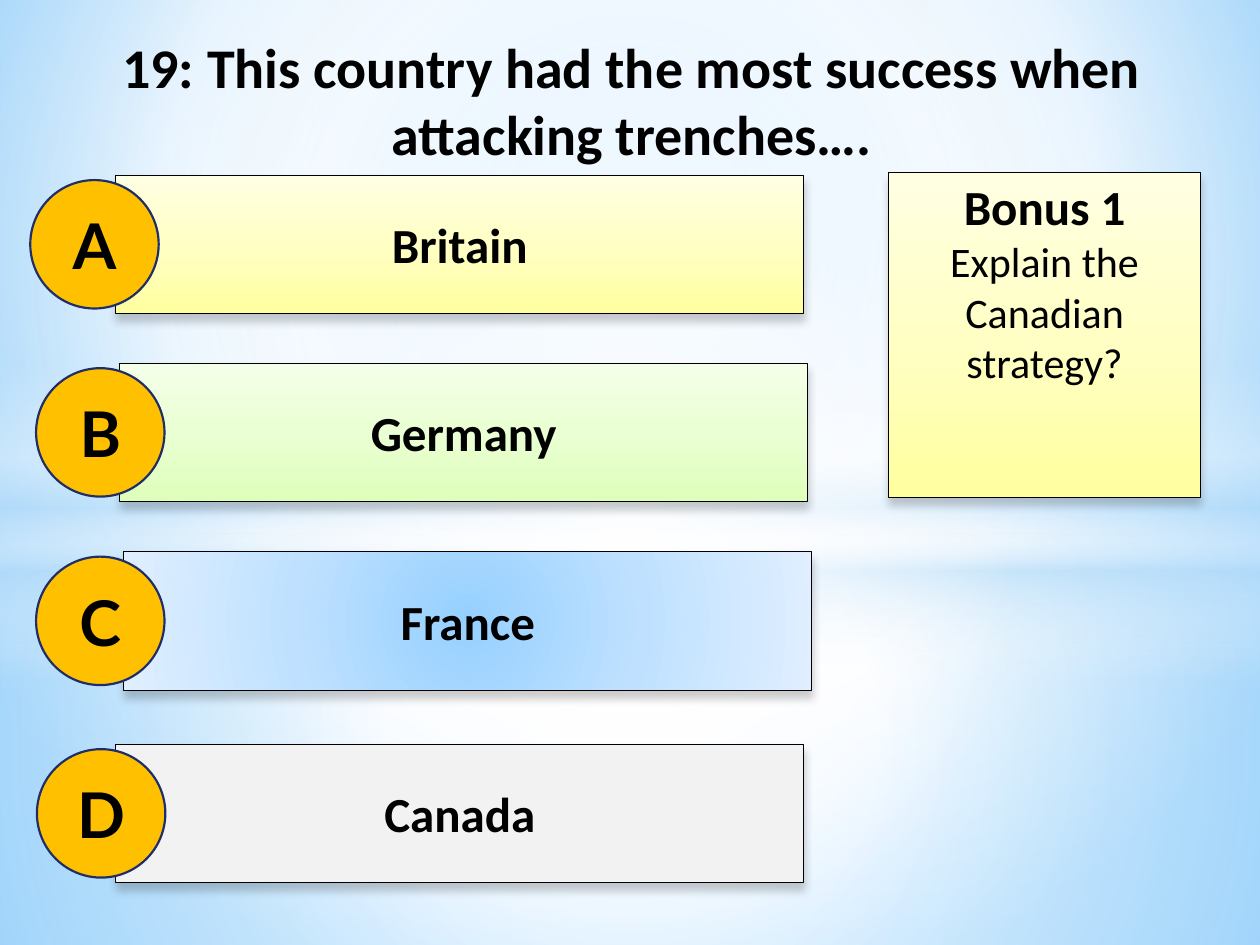
from typing import NamedTuple

from lxml import etree
from pptx import Presentation
from pptx.dml.color import RGBColor
from pptx.enum import shapes, text
from pptx.oxml import ns
from pptx.util import Pt

BLACK = RGBColor(0x00, 0x00, 0x00)
WHITE = RGBColor(0xFF, 0xFF, 0xFF)
SKY = RGBColor(0xB4, 0xDC, 0xFA)
GREY = RGBColor(0xF2, 0xF2, 0xF2)
AMBER = RGBColor(0xFF, 0xC0, 0x00)
NAVY = RGBColor(0x1F, 0x2E, 0x69)
BACKDROP_EDGE = RGBColor(0x9E, 0xD5, 0xFF)
BACKDROP_DEEP = RGBColor(0x5B, 0xB9, 0xFF)
YELLOWS = [RGBColor(0xFF, 0xFF, 0xA0), RGBColor(0xFF, 0xFF, 0xC5), RGBColor(0xFF, 0xFF, 0xE3)]
GREENS = [RGBColor(0xDE, 0xFF, 0xBB), RGBColor(0xEA, 0xFF, 0xD3), RGBColor(0xF4, 0xFF, 0xE9)]
BLUES = [RGBColor(0x96, 0xD0, 0xFF), RGBColor(0xBF, 0xE1, 0xFF), RGBColor(0xE0, 0xEF, 0xFF)]

RECT = shapes.MSO_SHAPE.RECTANGLE
OVAL = shapes.MSO_SHAPE.OVAL
BAR_WIDTH, BAR_HEIGHT, BADGE_SIZE = 393.1, 79.2, 73.4


class Stop(NamedTuple):
    position: int
    color: RGBColor
    opacity: int = 100


class Gradient(NamedTuple):
    """Linear when an angle is given, otherwise circular around the centre insets."""
    stops: list[Stop]
    angle: int | None = None
    centre: tuple[int, int, int, int] = (50, 50, 50, 50)


class Box(NamedTuple):
    left: float
    top: float
    width: float
    height: float


class Glow(NamedTuple):
    kind: shapes.MSO_SHAPE
    box: Box
    gradient: Gradient


class Answer(NamedTuple):
    letter: str
    country: str
    bar_left: float
    badge_left: float
    top: float
    fill: RGBColor | Gradient


def three_tone(colors: list[RGBColor], angle: int | None = None) -> Gradient:
    return Gradient([Stop(i * 50, color) for i, color in enumerate(colors)], angle)


BACKDROP = Gradient([Stop(0, BACKDROP_EDGE), Stop(60, WHITE), Stop(100, BACKDROP_DEEP)],
                    centre=(20, 10, 20, 60))
GLOWS = [
    Glow(RECT, Box(0, 304.6, 720, 235.4),
         Gradient([Stop(0, WHITE, 91), Stop(37, WHITE, 76), Stop(100, SKY, 79)])),
    Glow(RECT, Box(0, 0, 720, 304.6),
         Gradient([Stop(0, WHITE, 89), Stop(48, WHITE, 62), Stop(100, SKY, 79)])),
    Glow(RECT, Box(0, 208.8, 720, 180),
         Gradient([Stop(0, WHITE, 0), Stop(29, WHITE, 30), Stop(45, SKY, 40),
                   Stop(55, WHITE, 26), Stop(65, SKY, 60), Stop(100, WHITE, 0)], 90)),
    Glow(OVAL, Box(0, 126, 720, 401.8), Gradient([Stop(0, WHITE), Stop(54, WHITE, 0)])),
]
ANSWERS = [
    Answer("A", "Britain", 66.2, 17.3, 100, three_tone(YELLOWS, 270)),
    Answer("B", "Germany", 68.4, 20.6, 207.5, three_tone(GREENS, 270)),
    Answer("C", "France", 70.8, 20.6, 315.2, three_tone(BLUES)),
    Answer("D", "Canada", 66.2, 21.1, 425.2, GREY),
]


def add_xml(parent, tag: str, **attributes):
    values = {name: str(value) for name, value in attributes.items()}
    return etree.SubElement(parent, ns.qn(tag), values)


def add_color(parent, color: RGBColor, opacity: int) -> None:
    add_xml(add_xml(parent, "a:srgbClr", val=color), "a:alpha", val=opacity * 1000)


def apply_gradient(fill, properties, gradient: Gradient) -> None:
    """Swap a solid fill in the properties element for the gradient."""
    fill.solid()
    solid = properties.find(ns.qn("a:solidFill"))
    grad = etree.Element(ns.qn("a:gradFill"), rotWithShape="1")
    stop_list = add_xml(grad, "a:gsLst")
    for stop in gradient.stops:
        add_color(add_xml(stop_list, "a:gs", pos=stop.position * 1000), stop.color, stop.opacity)
    if gradient.angle is None:
        insets = {side: inset * 1000 for side, inset in zip("ltrb", gradient.centre)}
        add_xml(add_xml(grad, "a:path", path="circle"), "a:fillToRect", **insets)
    else:
        add_xml(grad, "a:lin", ang=gradient.angle * 60000, scaled=0)
    properties.replace(solid, grad)


def add_shape(slide, kind, box: Box, fill: RGBColor | Gradient,
              line: RGBColor | None = None, line_width: float = 0.5):
    shape = slide.shapes.add_shape(kind, *map(Pt, box))
    shape.shadow.inherit = False
    if isinstance(fill, Gradient):
        apply_gradient(shape.fill, shape.element.spPr, fill)
    else:
        shape.fill.solid()
        shape.fill.fore_color.rgb = fill
    if line is None:
        shape.line.fill.background()
    else:
        shape.line.color.rgb = line
        shape.line.width = Pt(line_width)
    return shape


def drop_shadow(shape) -> None:
    effects = shape.element.spPr.find(ns.qn("a:effectLst"))
    shadow = add_xml(effects, "a:outerShdw", blurRad=Pt(5), dist=Pt(4),
                     dir=90 * 60000, rotWithShape=0)
    add_color(shadow, BLACK, 20)


def style_paragraph(paragraph, size: float, font_name: str = "Calibri", bold: bool = True) -> None:
    paragraph.alignment = text.PP_ALIGN.CENTER
    font = paragraph.font
    font.name, font.size, font.bold = font_name, Pt(size), bold
    font.color.rgb = BLACK


def write_label(shape, label: str, size: float, font_name: str = "Calibri") -> None:
    frame = shape.text_frame
    frame.vertical_anchor = text.MSO_ANCHOR.MIDDLE
    frame.text = label
    style_paragraph(frame.paragraphs[0], size, font_name)


def add_title(slide, title_text: str) -> None:
    title = slide.shapes.title
    title.left, title.top, title.width, title.height = map(Pt, (15.1, 15.1, 691.9, 115.2))
    frame = title.text_frame
    frame.text = title_text
    frame.word_wrap = True
    frame.auto_size = text.MSO_AUTO_SIZE.NONE
    frame.vertical_anchor = text.MSO_ANCHOR.TOP
    style_paragraph(frame.paragraphs[0], 32)
    # Bring the title in front of the backdrop glows
    slide.shapes.element.append(title.element)


def add_answer_bar(slide, answer: Answer) -> None:
    box = Box(answer.bar_left, answer.top, BAR_WIDTH, BAR_HEIGHT)
    bar = add_shape(slide, RECT, box, answer.fill, BLACK)
    drop_shadow(bar)
    write_label(bar, answer.country, 28)


def add_badge(slide, answer: Answer) -> None:
    top = answer.top + (BAR_HEIGHT - BADGE_SIZE) / 2
    box = Box(answer.badge_left, top, BADGE_SIZE, BADGE_SIZE)
    badge = add_shape(slide, OVAL, box, AMBER, NAVY, 1.25)
    write_label(badge, answer.letter, 36, "Lato")


def add_bonus(slide) -> None:
    note = add_shape(slide, RECT, Box(507.6, 98.6, 178.6, 185.8), three_tone(YELLOWS, 270), BLACK)
    drop_shadow(note)
    frame = note.text_frame
    frame.vertical_anchor = text.MSO_ANCHOR.TOP
    frame.margin_top = Pt(2.5)
    frame.text = "Bonus 1\nExplain the Canadian strategy?"
    heading, question = frame.paragraphs
    style_paragraph(heading, 28)
    style_paragraph(question, 24, bold=False)


def main() -> None:
    deck = Presentation()
    deck.slide_width, deck.slide_height = Pt(720), Pt(540)
    slide = deck.slides.add_slide(deck.slide_layouts.get_by_name("Title Only"))
    backdrop_fill = slide.background.fill
    apply_gradient(backdrop_fill, slide.element.find(".//" + ns.qn("p:bgPr")), BACKDROP)
    for glow in GLOWS:
        add_shape(slide, glow.kind, glow.box, glow.gradient)
    add_title(slide, "19: This country had the most success when attacking trenches….")
    for answer in ANSWERS:
        add_answer_bar(slide, answer)
    for answer in ANSWERS:
        add_badge(slide, answer)
    add_bonus(slide)
    deck.save("out.pptx")


if __name__ == "__main__":
    main()
